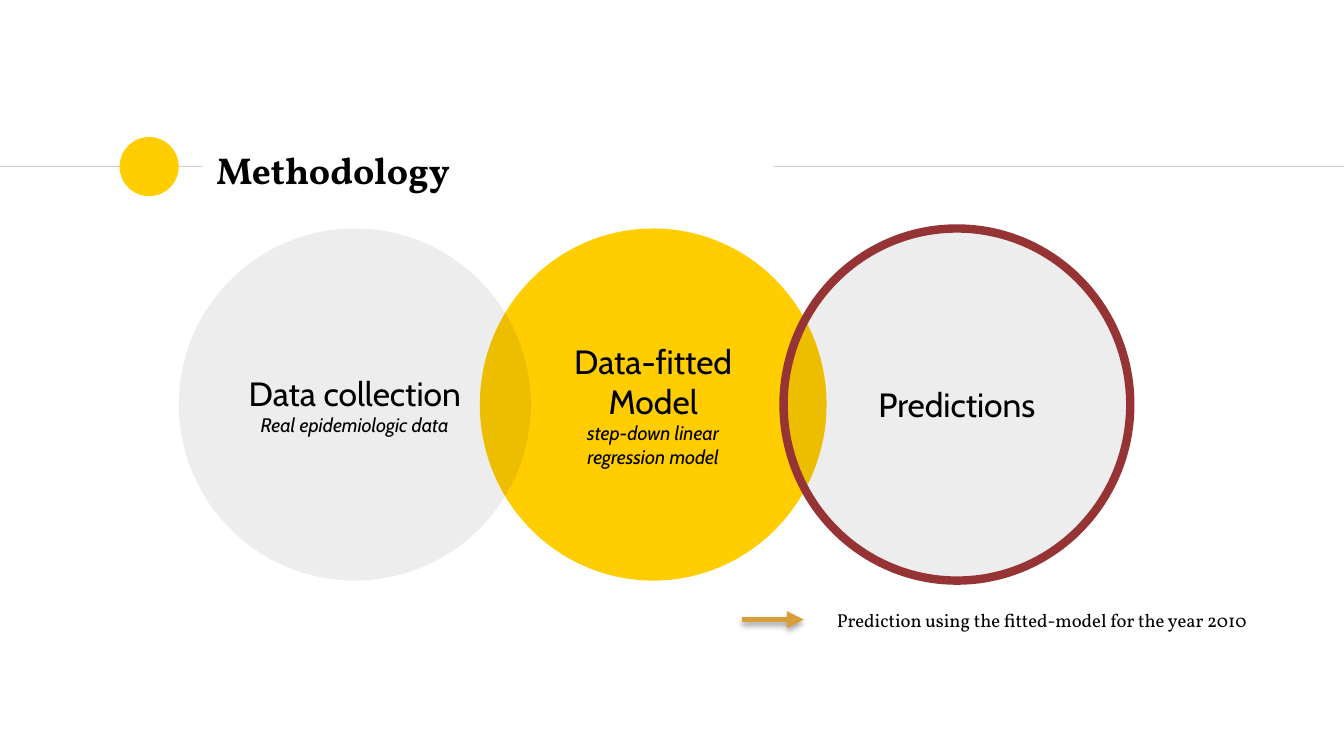
import pptx
import pptx.util
import pptx.dml.color
import pptx.enum.shapes
import pptx.enum.text
import pptx.oxml
import pptx.oxml.ns
from lxml import etree

Inches, Pt = pptx.util.Inches, pptx.util.Pt
ALIGN = pptx.enum.text.PP_ALIGN
ANCHOR = pptx.enum.text.MSO_ANCHOR
AUTO_SIZE = pptx.enum.text.MSO_AUTO_SIZE
A = pptx.oxml.ns.nsdecls("a")


def color(hex_string):
    return pptx.dml.color.RGBColor.from_string(hex_string)


def write(shape, lines, font, align, inset=0.1):
    """Fill a shape with (text, size, bold, italic) lines."""
    frame = shape.text_frame
    frame.word_wrap = True
    frame.vertical_anchor = ANCHOR.MIDDLE
    frame.margin_left = frame.margin_right = Inches(0.1)
    frame.margin_top = frame.margin_bottom = Inches(inset)
    frame.text = "\n".join(line[0] for line in lines)
    for paragraph, (_, size, bold, italic) in zip(frame.paragraphs, lines):
        paragraph.alignment = align
        run_font = paragraph.runs[0].font
        run_font.name, run_font.size = font, Pt(size)
        run_font.bold, run_font.italic = bold, italic
        run_font.color.rgb = color("000000")


# Slide in 16:9
prs = pptx.Presentation()
prs.slide_width = Inches(10)
prs.slide_height = prs.slide_width * 9 // 16
slide = prs.slides.add_slide(prs.slide_layouts[5])
shapes = slide.shapes

# Title
title = shapes.title
title.left, title.top = Inches(1.51), Inches(1.02)
title.width, title.height = Inches(4.24), Inches(0.48)
write(title, [("Methodology", 20, True, False)], "Vollkorn", ALIGN.LEFT)
title.text_frame.auto_size = AUTO_SIZE.NONE

# Header rules and prediction arrow: start x, end x, y, colour, weight
strokes = []
for x1, x2, y, stroke_color, weight in [
    (0, 1.5, 1.24, "CCCCCC", 0.75),
    (5.76, 10, 1.24, "CCCCCC", 0.75),
    (5.52, 5.98, 4.61, "D89F39", 3),
]:
    stroke = shapes.add_connector(
        pptx.enum.shapes.MSO_CONNECTOR.STRAIGHT,
        Inches(x1), Inches(y), Inches(x2), Inches(y))
    stroke.line.color.rgb = color(stroke_color)
    stroke.line.width = Pt(weight)
    effects = etree.SubElement(
        stroke._element.spPr, pptx.oxml.ns.qn("a:effectLst"))
    strokes.append((stroke, effects))

# Arrowhead and soft shadow of the prediction arrow
arrow, arrow_effects = strokes[-1]
arrow.line._get_or_add_ln().append(
    pptx.oxml.parse_xml(f'<a:tailEnd {A} type="triangle"/>'))
arrow_effects.append(pptx.oxml.parse_xml(
    f'<a:outerShdw {A} blurRad="{Pt(3.1)}" dist="{Pt(1.8)}" dir="5400000" '
    'rotWithShape="0"><a:srgbClr val="000000"><a:alpha val="35000"/>'
    '</a:srgbClr></a:outerShdw>'))

# Circles: left, top, width, height, fill, opacity, outline, lines
collection = [("Data collection", 18, False, False),
              ("Real epidemiologic data", 10.5, False, True)]
model = [("Data-fitted", 18, False, False),
         ("Model", 18, False, False),
         ("step-down linear", 10.5, False, True),
         ("regression model", 10.5, False, True)]
predictions = [("Predictions", 18, False, False)]
for left, top, width, height, fill, opacity, outline, lines in [
    (0.89, 1.02, 0.44, 0.44, "FFCD00", 100, None, []),
    (3.57, 1.7, 2.58, 2.62, "FFCD00", 100, None, model),
    (1.33, 1.7, 2.62, 2.62, "000000", 7, None, collection),
    (5.81, 1.7, 2.62, 2.62, "000000", 7, None, predictions),
    (5.83, 1.7, 2.58, 2.62, None, 100, "963334", []),
]:
    circle = shapes.add_shape(
        pptx.enum.shapes.MSO_SHAPE.OVAL,
        Inches(left), Inches(top), Inches(width), Inches(height))
    circle.shadow.inherit = False
    if fill:
        circle.fill.solid()
        circle.fill.fore_color.rgb = color(fill)
    else:
        circle.fill.background()
    if opacity < 100:
        tint = circle._element.spPr.find(".//" + pptx.oxml.ns.qn("a:srgbClr"))
        tint.append(pptx.oxml.parse_xml(
            f'<a:alpha {A} val="{opacity * 1000}"/>'))
    if outline:
        circle.line.color.rgb = color(outline)
        circle.line.width = Pt(4.5)
    else:
        circle.line.fill.background()
    if lines:
        write(circle, lines, "Cabin", ALIGN.CENTER)

# Caption beside the arrow
caption = shapes.add_textbox(
    Inches(5.98), Inches(4.48), Inches(3.54), Inches(0.27))
write(caption,
      [("Prediction using the fitted-model for the year 2010", 10, False, False)],
      "Vollkorn", ALIGN.CENTER, 0.05)
caption.text_frame.vertical_anchor = ANCHOR.TOP
caption.text_frame.auto_size = AUTO_SIZE.SHAPE_TO_FIT_TEXT

prs.save("out.pptx")
